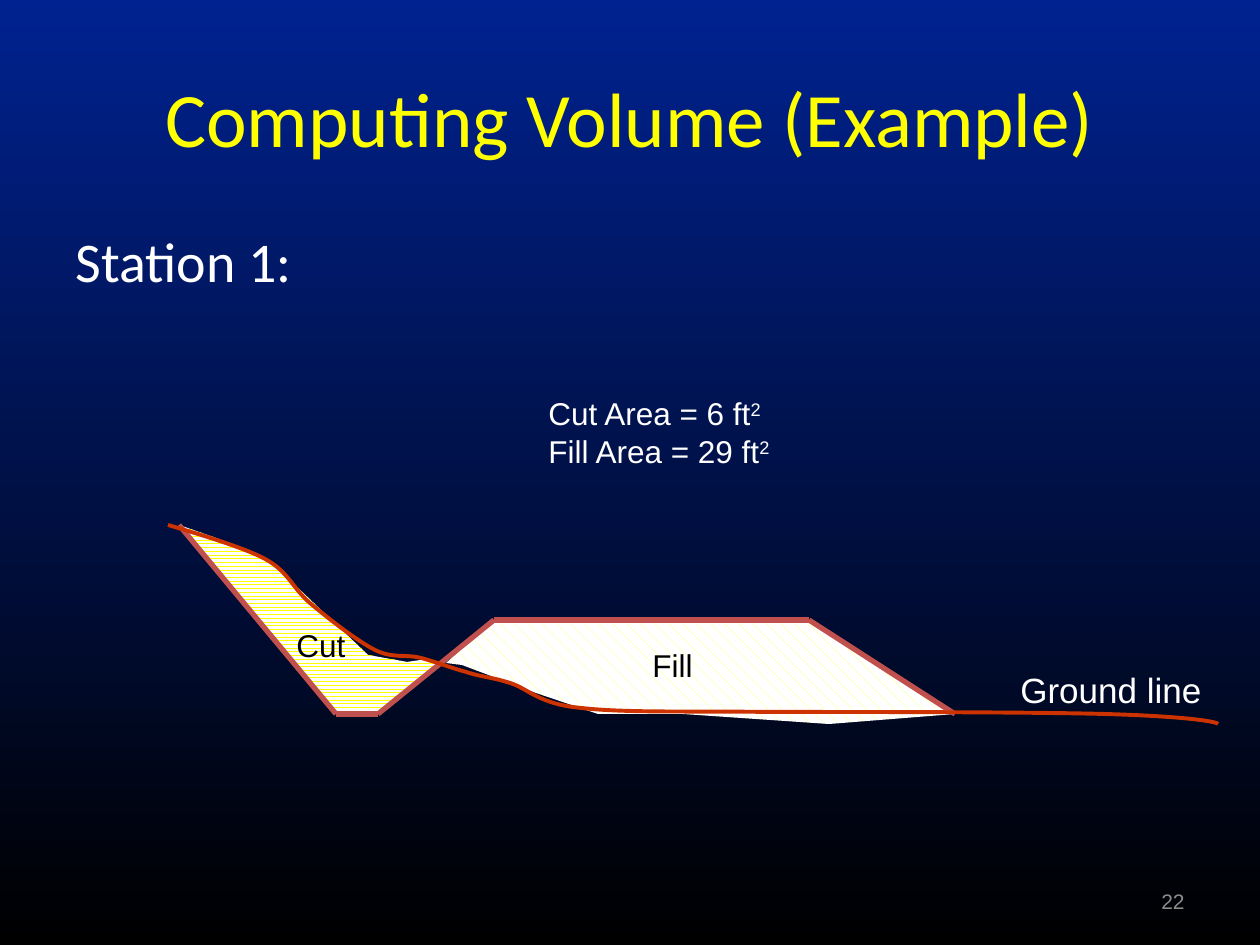
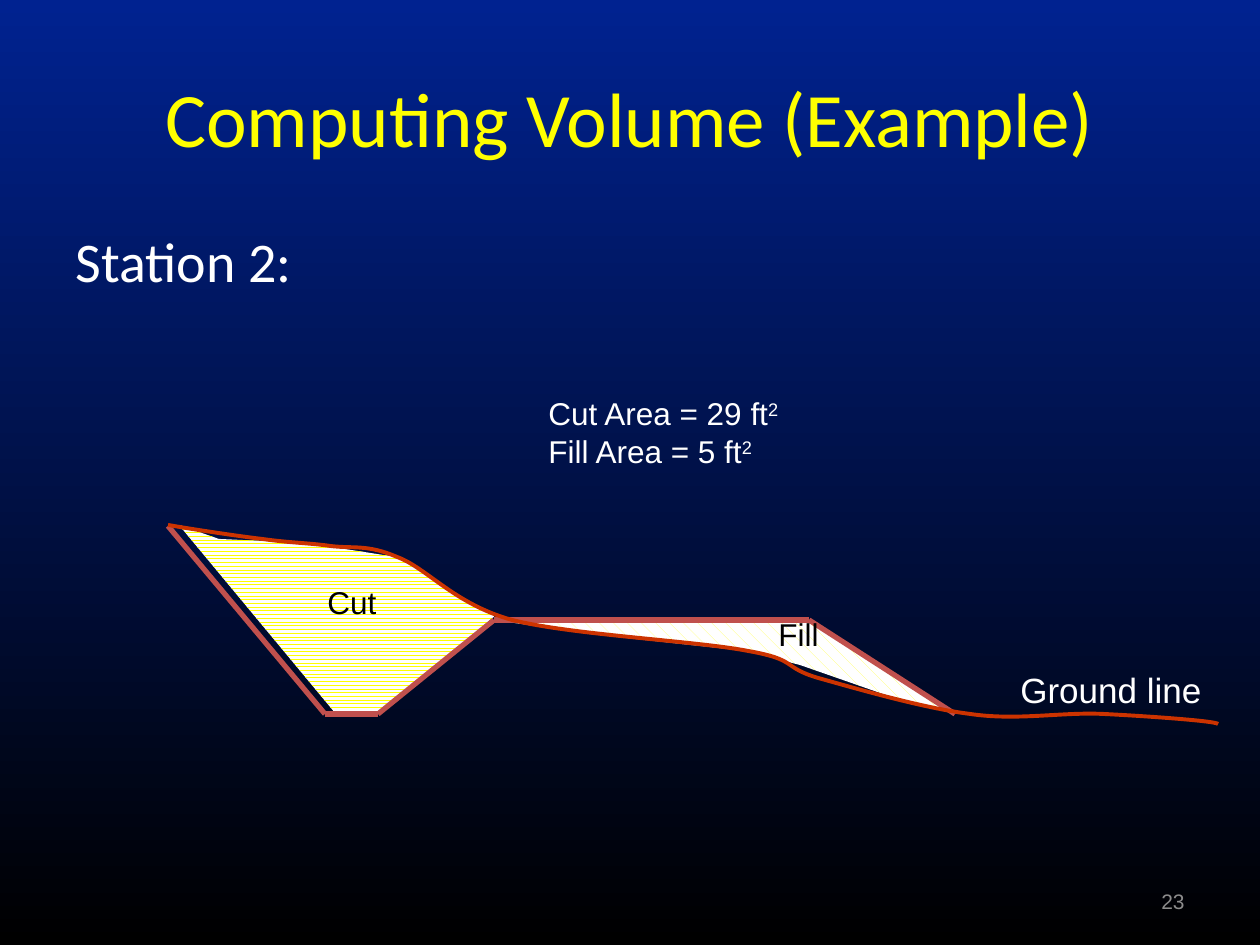
from lxml.etree import SubElement
from pptx import Presentation
from pptx.dml.color import RGBColor
from pptx.enum.dml import MSO_PATTERN
from pptx.enum.shapes import MSO_CONNECTOR
from pptx.enum.text import MSO_ANCHOR, PP_ALIGN
from pptx.oxml.ns import qn
from pptx.util import Pt

PX = 914400 / 126
WIDTH, HEIGHT = 1260, 945

NAVY = RGBColor(0x00, 0x22, 0x90)
BLACK = RGBColor(0x00, 0x00, 0x00)
WHITE = RGBColor(0xFF, 0xFF, 0xFF)
YELLOW = RGBColor(0xFF, 0xFF, 0x00)
LEMON = RGBColor(0xFF, 0xFF, 0x66)
BRICK = RGBColor(0xC0, 0x50, 0x4D)
RUST = RGBColor(0xCC, 0x33, 0x00)
GRAY = RGBColor(0x8C, 0x8C, 0x8C)

# The fill's top and toe are the same at both stations.
DITCH = (378, 714)
CREST = [(494, 620), (809, 620), (955, 714)]

STATIONS = [
    dict(
        number=22, name="Station 1:",
        areas=["Cut Area = 6 ft^2", "Fill Area = 29 ft^2"],
        cut=[(179, 525), (219, 539), (272, 563), (368, 655), (407, 662),
             (428, 659), (437, 665), DITCH, (336, 714)],
        fill=[(446, 663), *CREST, (829, 724), (683, 714), (598, 714),
              (536, 693), (462, 665)],
        road=[(179, 525), (336, 714), DITCH, *CREST],
        ground=[(168, 525),
                (184, 530), (241, 546), (265, 559),
                (289, 572), (292, 588), (311, 604),
                (329, 619), (357, 641), (375, 650),
                (393, 659), (406, 654), (421, 658),
                (436, 662), (451, 668), (466, 672),
                (481, 677), (491, 677), (510, 683),
                (529, 689), (538, 704), (581, 708),
                (625, 713), (685, 711), (771, 712),
                (858, 712), (1028, 712), (1103, 714),
                (1177, 716), (1216, 721), (1218, 724)],
        labels={"Cut": (284, 620, 94, 63), "Fill": (640, 640, 189, 63)},
    ),
    dict(
        number=23, name="Station 2:",
        areas=["Cut Area = 29 ft^2", "Fill Area = 5 ft^2"],
        cut=[(179, 525), (219, 539), (306, 543), (396, 557), (438, 581),
             (474, 606), (495, 616), DITCH, (336, 714)],
        fill=[(590, 634), *CREST, (883, 694), (800, 665), (746, 651)],
        road=[(168, 526), (325, 714), DITCH, *CREST],
        ground=[(168, 525),
                (184, 528), (236, 536), (262, 539),
                (290, 543), (309, 543), (330, 546),
                (353, 549), (367, 544), (397, 557),
                (427, 568), (454, 604), (512, 620),
                (571, 635), (697, 641), (748, 651),
                (799, 660), (781, 667), (818, 678),
                (854, 688), (922, 708), (970, 714),
                (1017, 721), (1061, 712), (1103, 714),
                (1144, 716), (1216, 721), (1218, 724)],
        labels={"Cut": (315, 577, 94, 63), "Fill": (766, 609, 94, 63)},
    ),
]


def emu(*sizes):
    return [round(size * PX) for size in sizes]


def write(frame, *lines, size=18, color=WHITE, font="Arial",
          align=None, anchor=None):
    """Fill a text frame; what follows ^ in a line is superscript."""
    frame.word_wrap = True
    if anchor is not None:
        frame.vertical_anchor = anchor
    for i, line in enumerate(lines):
        para = frame.add_paragraph() if i else frame.paragraphs[0]
        para.alignment = align
        base, _, power = line.partition("^")
        for part in filter(None, (base, power)):
            run = para.add_run()
            run.text = part
            run.font.size = Pt(size)
            run.font.name = font
            run.font.color.rgb = color
        if power:
            run.font._element.set("baseline", "30000")


def label(slide, box, *lines, **style):
    write(slide.shapes.add_textbox(*emu(*box)).text_frame, *lines, **style)


def place(holder, box, text, **style):
    holder.left, holder.top, holder.width, holder.height = emu(*box)
    write(holder.text_frame, text, font="Calibri", **style)


def outline(slide, points, close):
    pen = slide.shapes.build_freeform(*points[0], scale=PX)
    pen.add_line_segments(points[1:], close=close)
    shape = pen.convert_to_shape()
    shape.shadow.inherit = False
    return shape


def hatch(slide, points, pattern, color):
    shape = outline(slide, points, True)
    shape.line.fill.background()
    shape.fill.patterned()
    shape.fill.pattern = pattern
    shape.fill.fore_color.rgb = color
    shape.fill.back_color.rgb = WHITE


def curve(slide, points, color, width):
    """Draw a start point and then triples of Bezier points."""
    shape = outline(slide, points, False)
    shape.fill.background()
    shape.line.color.rgb = color
    shape.line.width = Pt(width)
    steps = shape._element.xpath(".//a:lnTo")
    track = steps[0].getparent()
    for i in range(0, len(steps), 3):
        bend = SubElement(track, qn("a:cubicBezTo"))
        for step in steps[i:i + 3]:
            bend.append(step[0])
            track.remove(step)


def chain(slide, points, color, width):
    for start, end in zip(points, points[1:]):
        line = slide.shapes.add_connector(
            MSO_CONNECTOR.STRAIGHT, *emu(*start, *end))
        line.line.color.rgb = color
        line.line.width = Pt(width)
        SubElement(line._element.spPr, qn("a:effectLst"))


def shade(master):
    fill = master.background.fill
    fill.gradient()
    fill.gradient_angle = 270
    for stop, color in zip(fill.gradient_stops, (NAVY, BLACK)):
        stop.color.rgb = color


def station(deck, data):
    slide = deck.slides.add_slide(deck.slide_layouts[1])
    label(slide, (903, 876, 294, 50), str(data["number"]), size=12,
          color=GRAY, align=PP_ALIGN.RIGHT, anchor=MSO_ANCHOR.MIDDLE)
    title, body = slide.placeholders
    place(title, (63, 38, 1134, 158), "Computing Volume (Example)", size=44,
          color=YELLOW, align=PP_ALIGN.CENTER, anchor=MSO_ANCHOR.MIDDLE)
    place(body, (63, 220, 1134, 624), data["name"], size=32)
    props = body.text_frame.paragraphs[0]._p.get_or_add_pPr()
    SubElement(props, qn("a:buNone"))

    hatch(slide, data["cut"], MSO_PATTERN.ZIG_ZAG, YELLOW)
    hatch(slide, data["fill"], MSO_PATTERN.SHINGLE, LEMON)
    chain(slide, data["road"], BRICK, 3)
    curve(slide, data["ground"], RUST, 2.25)

    label(slide, (1008, 662, 252, 54), "Ground line", size=20)
    label(slide, (536, 388, 536, 90), *data["areas"])
    for text, box in data["labels"].items():
        label(slide, box, text, color=BLACK)


def main():
    deck = Presentation()
    deck.slide_width, deck.slide_height = emu(WIDTH, HEIGHT)
    shade(deck.slide_master)
    for data in STATIONS:
        station(deck, data)
    deck.save("out.pptx")


if __name__ == "__main__":
    main()
